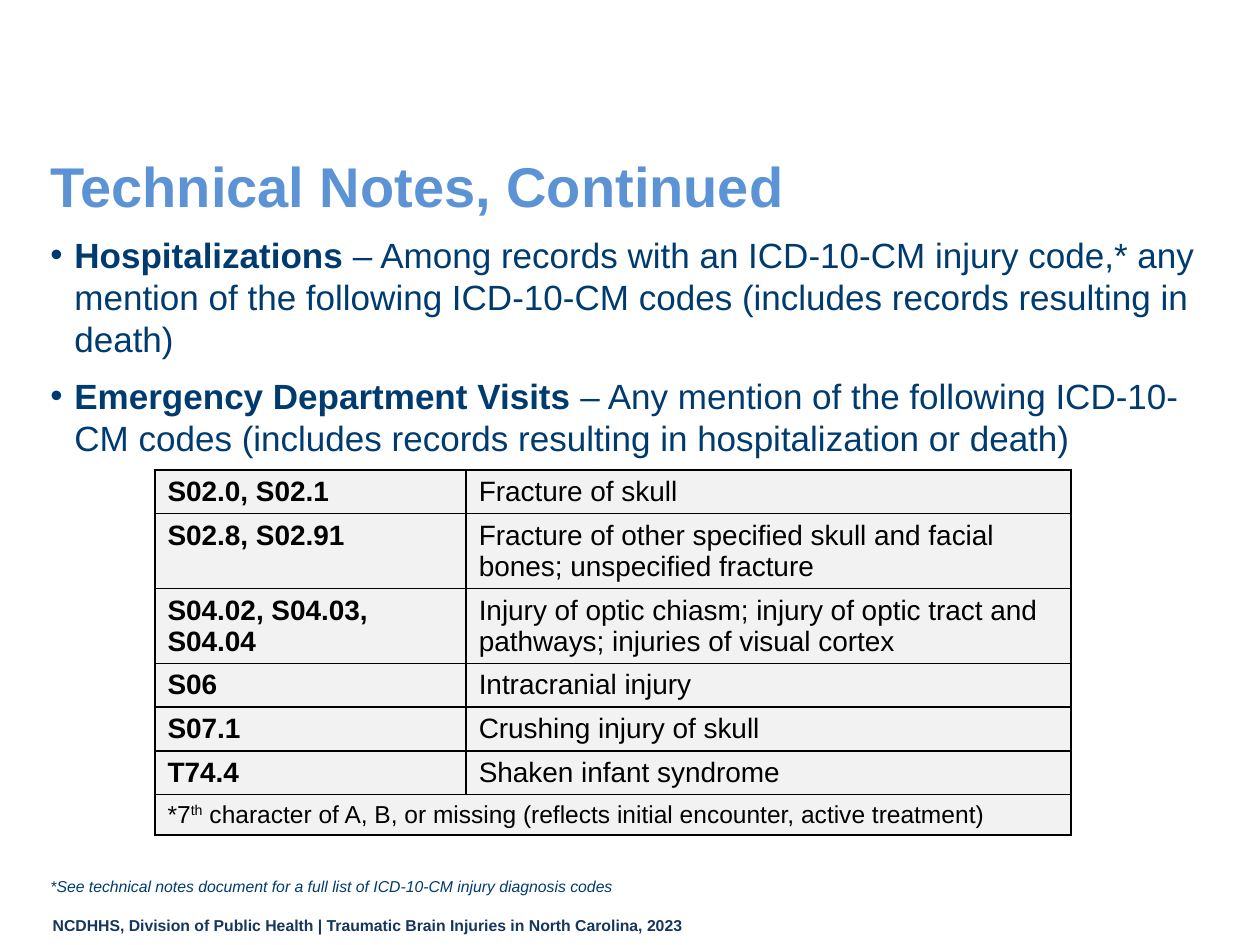
"""Build the technical notes slide on injury diagnosis codes."""
from lxml.etree import SubElement
from pptx import Presentation
from pptx.dml.color import RGBColor
from pptx.enum.text import MSO_ANCHOR as Anchor, MSO_AUTO_SIZE as AutoSize, PP_ALIGN as Align
from pptx.oxml.ns import qn
from pptx.util import Inches, Pt

THEME = {
    "font": "Arial", "title": "5C93D5", "body": "003B70", "footer": "15365E",
    "table": "000000", "cell": "F2F2F2", "border": "000000",
    "title_size": 32, "body_size": 20, "table_size": 16, "note_size": 14, "small_size": 9,
}
TITLE = "Technical Notes, Continued"
BULLETS = [
    ("Hospitalizations", " – Among records with an ICD-10-CM injury code,* any mention of the "
     "following ICD-10-CM codes (includes records resulting in death)"),
    ("Emergency Department Visits ", "– Any mention of the following ICD-10-CM codes "
     "(includes records resulting in hospitalization or death)"),
]
CODES = [
    ("S02.0, S02.1", "Fracture of skull"),
    ("S02.8, S02.91", "Fracture of other specified skull and facial bones; unspecified fracture"),
    ("S04.02, S04.03, S04.04",
     "Injury of optic chiasm; injury of optic tract and pathways; injuries of visual cortex"),
    ("S06", "Intracranial injury"),
    ("S07.1", "Crushing injury of skull"),
    ("T74.4", "Shaken infant syndrome"),
]
TABLE_NOTE = [("*7", 0), ("th", 30000),
              (" character of A, B, or missing (reflects initial encounter, active treatment)", 0)]
FOOTNOTE = "*See technical notes document for a full list of ICD-10-CM injury diagnosis codes"
FOOTER = "NCDHHS, Division of Public Health | Traumatic Brain Injuries in North Carolina, 2023"
COLUMN_WIDTHS = [2.47, 4.8]
ROW_HEIGHTS = [0.22, 0.51, 0.51, 0.3, 0.31, 0.31, 0.3]


def add_span(para, text, color, size, bold=False, italic=False):
    span = para.add_run()
    span.text = text
    font = span.font
    font.name, font.size = THEME["font"], Pt(THEME[size])
    font.bold, font.italic = bold, italic
    font.color.rgb = RGBColor.from_string(THEME[color])
    return span


def place(box, left, top, width, height, anchor=Anchor.TOP):
    box.left, box.top = Inches(left), Inches(top)
    box.width, box.height = Inches(width), Inches(height)
    frame = box.text_frame
    frame.word_wrap, frame.auto_size = True, AutoSize.NONE
    frame.vertical_anchor = anchor
    para = frame.paragraphs[0]
    para.alignment, para.space_before = Align.LEFT, Pt(0)
    return para


def set_bullet(para, indent=0.0, mark=None):
    properties = para._p.get_or_add_pPr()
    properties.set("marL", str(Inches(indent)))
    properties.set("indent", str(-Inches(indent)))
    if mark:
        SubElement(properties, qn("a:buFont"), typeface=THEME["font"])
        SubElement(properties, qn("a:buChar"), char=mark)
    else:
        SubElement(properties, qn("a:buNone"))


def style_cell(cell):
    properties = cell._tc.get_or_add_tcPr()
    for side in ("lnL", "lnR", "lnT", "lnB"):
        line = SubElement(properties, qn(f"a:{side}"), w=str(Pt(1)))
        fill = SubElement(line, qn("a:solidFill"))
        SubElement(fill, qn("a:srgbClr"), val=THEME["border"])
    cell.fill.solid()
    cell.fill.fore_color.rgb = RGBColor.from_string(THEME["cell"])


def add_code_table(page):
    frame = page.shapes.add_table(len(ROW_HEIGHTS), len(COLUMN_WIDTHS), Inches(1.23),
                                  Inches(3.73), Inches(sum(COLUMN_WIDTHS)), Inches(sum(ROW_HEIGHTS)))
    table = frame.table
    table.first_row = table.horz_banding = False
    for column, width in zip(table.columns, COLUMN_WIDTHS):
        column.width = Inches(width)
    for row, height in zip(table.rows, ROW_HEIGHTS):
        row.height = Inches(height)
    for cell in table.iter_cells():
        style_cell(cell)
    for row, texts in enumerate(CODES):
        for column, text in enumerate(texts):
            para = table.cell(row, column).text_frame.paragraphs[0]
            add_span(para, text, "table", "table_size", bold=column == 0)
    last = len(CODES)
    note = table.cell(last, 0)
    note.merge(table.cell(last, 1))
    for text, baseline in TABLE_NOTE:
        span = add_span(note.text_frame.paragraphs[0], text, "table", "note_size")
        if baseline:
            span._r.get_or_add_rPr().set("baseline", str(baseline))


def main():
    deck = Presentation()
    deck.slide_width, deck.slide_height = Inches(10), Inches(7.5)
    page = deck.slides.add_slide(deck.slide_layouts.get_by_name("Two Content"))
    title, body, footnote = page.placeholders

    footer = page.shapes.add_textbox(0, 0, 0, 0)
    add_span(place(footer, 0.32, 7.22, 8.74, 0.29), FOOTER, "footer", "small_size", bold=True)

    para = place(body, 0.3, 1.8, 9.37, 4.53)
    for index, (term, meaning) in enumerate(BULLETS):
        if index:
            para = body.text_frame.add_paragraph()
            para.space_before = Pt(9)
        set_bullet(para, 0.19, "•")
        add_span(para, term, "body", "body_size", bold=True)
        add_span(para, meaning, "body", "body_size")

    para = place(footnote, 0.3, 6.8, 8.83, 0.36, Anchor.BOTTOM)
    set_bullet(para)
    add_span(para, FOOTNOTE, "body", "small_size", italic=True)

    para = place(title, 0.3, 1.2, 9.37, 0.6, Anchor.MIDDLE)
    para.line_spacing = 0.9
    add_span(para, TITLE, "title", "title_size", bold=True)

    add_code_table(page)
    deck.save("out.pptx")


if __name__ == "__main__":
    main()
